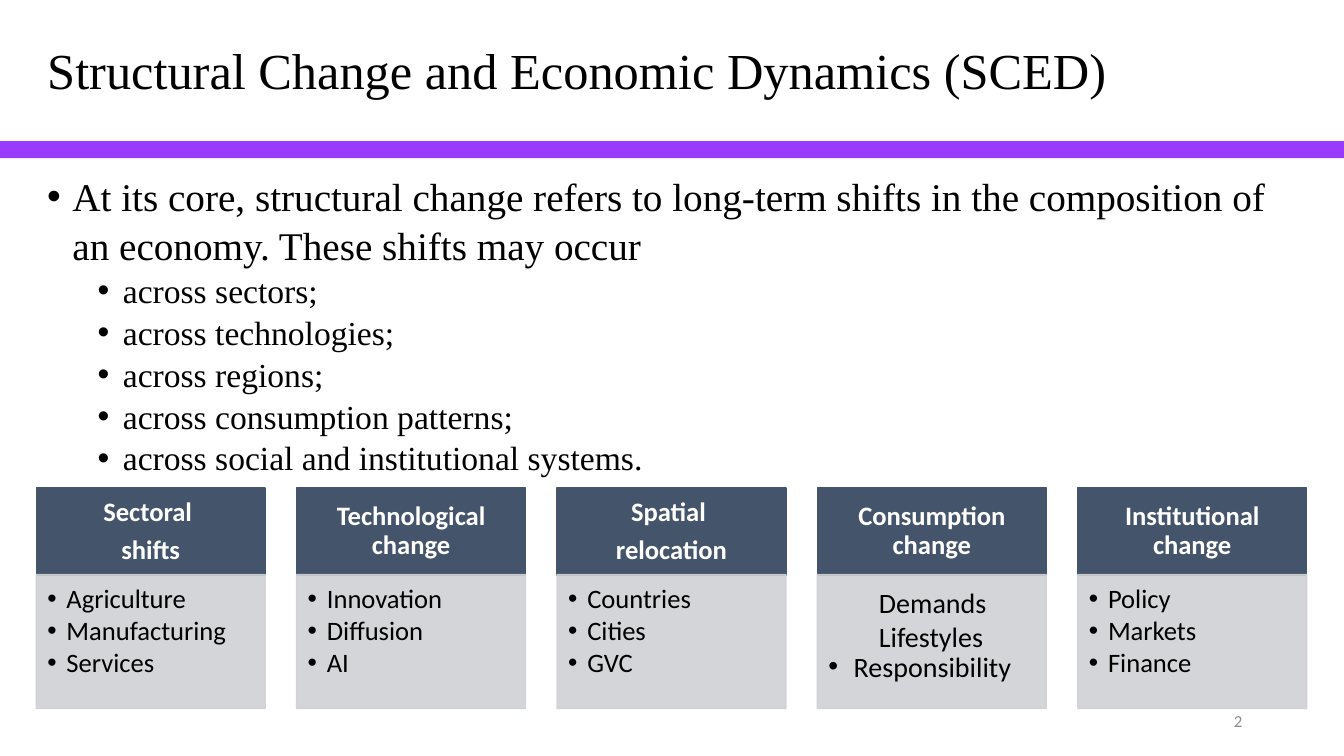
import pptx
import pptx.util
import pptx.dml.color
import pptx.enum.shapes
import pptx.enum.text
import pptx.oxml
import pptx.oxml.ns
import lxml.etree

Inches, Pt = pptx.util.Inches, pptx.util.Pt
ALIGN = pptx.enum.text.PP_ALIGN
ANCHOR = pptx.enum.text.MSO_ANCHOR
SERIF, SANS = "Times New Roman", "Calibri"


def paint(color, hex_string, opacity=100):
    """Apply a hex colour, with opacity in percent, to a fill, line or font format."""
    color.rgb = pptx.dml.color.RGBColor.from_string(hex_string)
    if opacity < 100:
        for clr in color._xFill.iter(pptx.oxml.ns.qn("a:srgbClr")):
            lxml.etree.SubElement(clr, pptx.oxml.ns.qn("a:alpha"), val=str(opacity * 1000))


def write(tf, text, size, font=SANS, color="000000", bold=False, align=ALIGN.LEFT,
          spacing=1.0, after=0, level=0, indent=0, hang=0):
    """Append a paragraph; a hang above zero gives it a bullet."""
    p = tf.paragraphs[0] if not tf.text else tf.add_paragraph()
    pPr = p._p.get_or_add_pPr()
    if hang:
        pPr.set("marL", str(Inches(indent)))
        pPr.set("indent", str(-Inches(hang)))
        lxml.etree.SubElement(pPr, pptx.oxml.ns.qn("a:buFont"), typeface="Arial")
        lxml.etree.SubElement(pPr, pptx.oxml.ns.qn("a:buChar"), char="•")
    p.level, p.alignment, p.line_spacing = level, align, spacing
    p.space_before, p.space_after = Pt(0), Pt(after)
    r = p.add_run()
    r.text = text
    r.font.name, r.font.size, r.font.bold = font, Pt(size), bold
    paint(r.font.fill.fore_color if r.font.fill.solid() else r.font.color, color)


prs = pptx.Presentation()
prs.slide_width, prs.slide_height = Inches(13.33), Inches(7.5)
s = prs.slides.add_slide(prs.slide_layouts[6])

# Purple rule under the title
rule = s.shapes.add_shape(pptx.enum.shapes.MSO_SHAPE.RECTANGLE,
                          0, Inches(1.4), prs.slide_width, Inches(0.17))
rule.shadow.inherit = False
rule.fill.solid()
paint(rule.fill.fore_color, "993AFF")
rule.line.fill.background()

# Cards: a heading above a list, in five equal columns
LEFT, PITCH, WIDTH = 0.36, 2.5825, 2.27
HEAD = dict(top=4.84, height=0.87, fill="44546A", opacity=100,
            insets=(0.15, 0.08, 0.15, 0.08), anchor=ANCHOR.MIDDLE)
LIST = dict(top=5.7, height=1.33, fill="CFD1D4", opacity=90,
            insets=(0.11, 0.11, 0.15, 0.17), anchor=ANCHOR.TOP)
head_text = dict(size=19, color="FFFFFF", bold=True, align=ALIGN.CENTER, spacing=0.9, after=6.3)
item_text = dict(size=19, spacing=0.9, after=2.4, level=1, indent=0.19, hang=0.19)
plain_item = dict(size=20, level=1)
wide_item = dict(size=20, spacing=0.9, level=1, indent=0.25, hang=0.25)

cards = [
    (["Sectoral ", "shifts"], ["Agriculture", "Manufacturing", "Services"]),
    (["Technological change"], ["Innovation", "Diffusion", "AI"]),
    (["Spatial ", "relocation"], ["Countries", "Cities", "GVC"]),
    (["Consumption change"], ["Demands", "Lifestyles", "Responsibility"]),
    (["Institutional change"], ["Policy", "Markets", "Finance"]),
]
for col, (heading, items) in enumerate(cards):
    if heading == ["Consumption change"]:
        item_formats = [plain_item, plain_item, wide_item]
    else:
        item_formats = [item_text] * 3
    for part, lines, formats in ((HEAD, heading, [head_text] * 2), (LIST, items, item_formats)):
        sp = s.shapes.add_shape(pptx.enum.shapes.MSO_SHAPE.RECTANGLE,
                                Inches(LEFT + col * PITCH), Inches(part["top"]),
                                Inches(WIDTH), Inches(part["height"]))
        sp.shadow.inherit = False
        sp.fill.solid()
        paint(sp.fill.fore_color, part["fill"], part["opacity"])
        sp.line.width = Pt(1)
        sp.line.fill.solid()
        paint(sp.line.fill.fore_color, part["fill"], part["opacity"])
        tf = sp.text_frame
        tf.word_wrap, tf.vertical_anchor = True, part["anchor"]
        tf.margin_left, tf.margin_top, tf.margin_right, tf.margin_bottom = map(Inches, part["insets"])
        for line, style in zip(lines, formats):
            write(tf, line, **style)

# Title, body and slide number
frames = []
for left, top, width, height, anchor in (
        (0.37, 0, 12.61, 1.45, ANCHOR.MIDDLE),
        (0.37, 1.64, 12.61, 5.14, ANCHOR.TOP),
        (9.42, 6.95, 3, 0.4, ANCHOR.MIDDLE)):
    tf = s.shapes.add_textbox(Inches(left), Inches(top), Inches(width), Inches(height)).text_frame
    tf.word_wrap, tf.vertical_anchor = True, anchor
    frames.append(tf)
title, body, number = frames

write(title, "Structural Change and Economic Dynamics (SCED)", 36, SERIF, spacing=0.9)
write(body, "At its core, structural change refers to long-term shifts in the composition of "
            "an economy. These shifts may occur", 28, SERIF, spacing=1.04, indent=0.25, hang=0.25)
for place in ("sectors;", "technologies;", "regions;", "consumption patterns;",
              "social and institutional systems."):
    write(body, f"across {place}", 24, SERIF, spacing=1.04, level=1, indent=0.75, hang=0.25)
write(number, "2", 12, color="8C8C8C", align=ALIGN.RIGHT)

prs.save("out.pptx")
